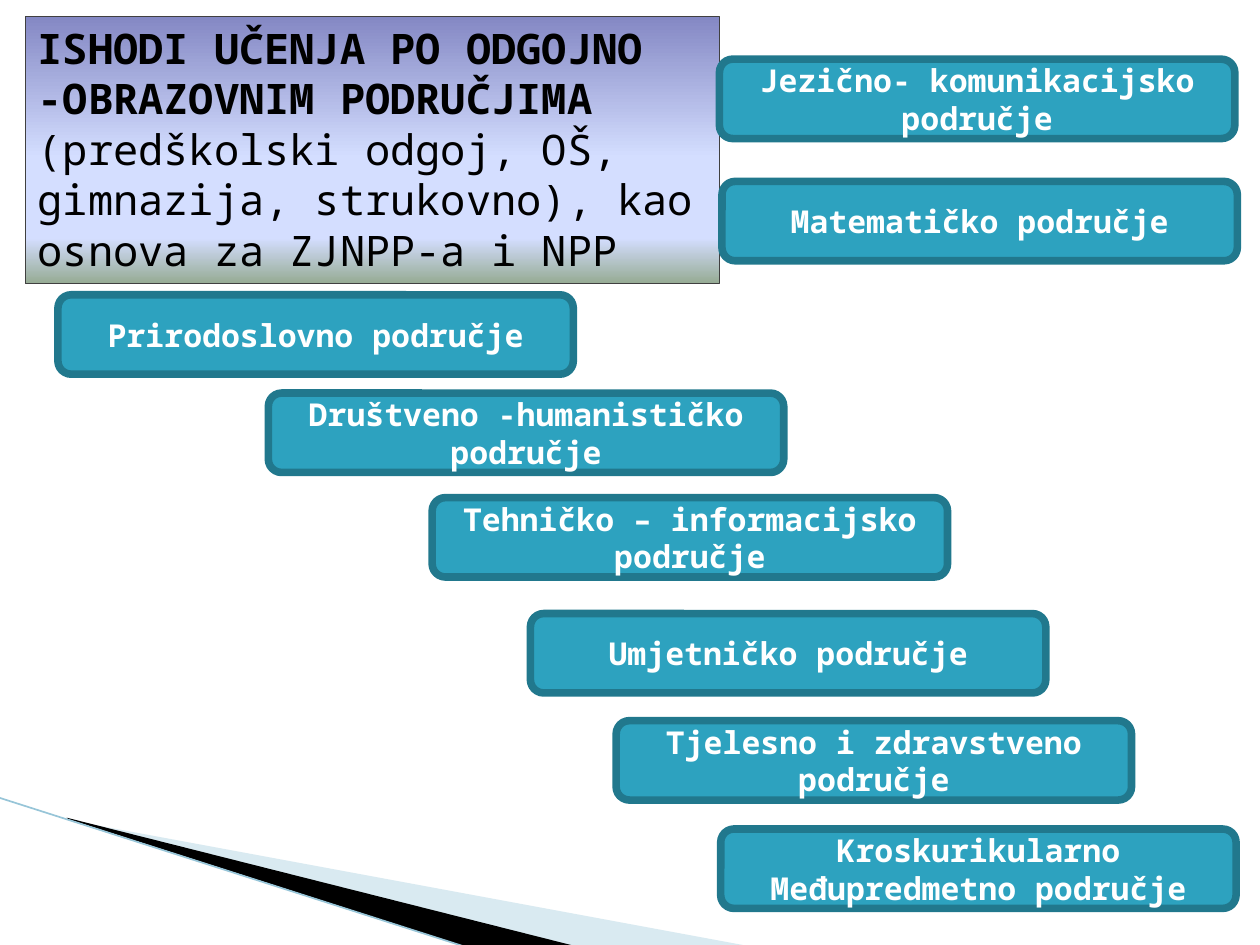
from copy import deepcopy
from typing import NamedTuple

from lxml.etree import SubElement
from pptx import Presentation
from pptx.dml.color import RGBColor
from pptx.enum.shapes import MSO_CONNECTOR as Connector, MSO_SHAPE as Preset
from pptx.enum.text import MSO_ANCHOR as Anchor, PP_ALIGN as Align
from pptx.oxml.ns import qn
from pptx.util import Emu, Pt

EMU_PER_PX = 9144
FONT_NAME = "Noto Sans Mono"
AREA_WIDTH, AREA_HEIGHT = 409, 63

BLACK = RGBColor(0x00, 0x00, 0x00)
WHITE = RGBColor(0xFF, 0xFF, 0xFF)
TEAL = RGBColor(0x2D, 0xA2, 0xBF)
DARK_TEAL = RGBColor(0x21, 0x78, 0x8D)
PALE_BLUE = RGBColor(0xA0, 0xCB, 0xDC)
LINE_BLUE = RGBColor(0x97, 0xC5, 0xD8)
GRAY = RGBColor(0x40, 0x40, 0x40)
LAVENDER = RGBColor(0x84, 0x88, 0xC4)
PERIWINKLE = RGBColor(0xD4, 0xDE, 0xFF)
SAGE = RGBColor(0x96, 0xAB, 0x94)

TITLE_STOPS = [(0, LAVENDER), (0.53, PERIWINKLE), (0.83, PERIWINKLE), (1, SAGE)]
TITLE_RUNS = [
    ("ISHODI UČENJA PO ODGOJNO -OBRAZOVNIM PODRUČJIMA ", True),
    ("(predškolski odgoj, OŠ, gimnazija, strukovno), kao osnova za ZJNPP-a i NPP", False),
]


class Wedge(NamedTuple):
    points: list[tuple[int, int]]
    color: RGBColor
    opacity: int


class Area(NamedTuple):
    text: str
    left: int
    top: int


WEDGES = [
    Wedge([(55, 651), (595, 751), (456, 751), (55, 650)], PALE_BLUE, 40),
    Wedge([(53, 649), (457, 751), (372, 752), (54, 650)], BLACK, 100),
]
AREAS = [
    Area("Matematičko područje", 573, 144),
    Area("Jezično- komunikacijsko područje", 571, 47),
    Area("Društveno -humanističko područje", 213, 312),
    Area("Tehničko – informacijsko područje", 343, 395),
    Area("Umjetničko područje", 421, 487),
    Area("Tjelesno i zdravstveno područje", 489, 572),
    Area("Kroskurikularno Međupredmetno područje", 572, 658),
    Area("Prirodoslovno područje", 46, 234),
]


def px(length: int) -> Emu:
    return Emu(length * EMU_PER_PX)


def set_format(target, values: dict) -> None:
    for name, value in values.items():
        setattr(target, name, value)


def set_line(line, color: RGBColor, width: float) -> None:
    line.color.rgb = color
    line.width = Pt(width)


def add_run(paragraph, text: str, size: int, color: RGBColor, bold: bool) -> None:
    run = paragraph.add_run()
    run.text = text
    set_format(run.font, {"name": FONT_NAME, "size": Pt(size), "bold": bold})
    run.font.color.rgb = color


def add_wedge(slide, wedge: Wedge) -> None:
    first, *others = wedge.points
    builder = slide.shapes.build_freeform(*first, scale=EMU_PER_PX)
    builder.add_line_segments(others, close=True)
    shape = builder.convert_to_shape()
    shape.shadow.inherit = False
    shape.fill.solid()
    shape.fill.fore_color.rgb = wedge.color
    shape.line.fill.background()
    if wedge.opacity < 100:
        color = shape._element.spPr.find(qn("a:solidFill")).find(qn("a:srgbClr"))
        SubElement(color, qn("a:alpha"), val=str(wedge.opacity * 1000))


def add_edge(slide) -> None:
    edge = slide.shapes.add_connector(Connector.STRAIGHT, px(-1), px(633), px(371), px(752))
    set_line(edge.line, LINE_BLUE, 0.95)
    SubElement(edge._element.spPr, qn("a:effectLst"))


def fill_gradient(shape, stops: list[tuple[float, RGBColor]]) -> None:
    shape.fill.gradient()
    shape.fill.gradient_angle = 270
    stop_list = shape._element.spPr.find(qn("a:gradFill")).find(qn("a:gsLst"))
    while len(stop_list) < len(stops):
        stop_list.append(deepcopy(stop_list[0]))
    for stop, (position, color) in zip(shape.fill.gradient_stops, stops):
        stop.position = position
        stop.color.rgb = color


def add_title(slide) -> None:
    shape = slide.shapes.add_shape(Preset.RECTANGLE, px(20), px(13), px(551), px(212))
    shape.shadow.inherit = False
    fill_gradient(shape, TITLE_STOPS)
    set_line(shape.line, GRAY, 0.75)
    set_format(shape.text_frame, {"word_wrap": True, "vertical_anchor": Anchor.TOP})
    paragraph = shape.text_frame.paragraphs[0]
    paragraph.alignment = Align.LEFT
    for text, bold in TITLE_RUNS:
        add_run(paragraph, text, 24, BLACK, bold)


def add_area(slide, area: Area) -> None:
    shape = slide.shapes.add_shape(
        Preset.ROUNDED_RECTANGLE, px(area.left), px(area.top), px(AREA_WIDTH), px(AREA_HEIGHT)
    )
    shape.shadow.inherit = False
    shape.fill.solid()
    shape.fill.fore_color.rgb = TEAL
    set_line(shape.line, DARK_TEAL, 4.33)
    set_format(shape.text_frame, {"word_wrap": True, "vertical_anchor": Anchor.MIDDLE})
    paragraph = shape.text_frame.paragraphs[0]
    paragraph.alignment = Align.CENTER
    add_run(paragraph, area.text, 18, WHITE, True)


def main() -> None:
    presentation = Presentation()
    set_format(presentation, {"slide_width": px(1000), "slide_height": px(750)})
    slide = presentation.slides.add_slide(presentation.slide_layouts[6])
    for wedge in WEDGES:
        add_wedge(slide, wedge)
    add_edge(slide)
    add_title(slide)
    for area in AREAS:
        add_area(slide, area)
    presentation.save("out.pptx")


if __name__ == "__main__":
    main()
